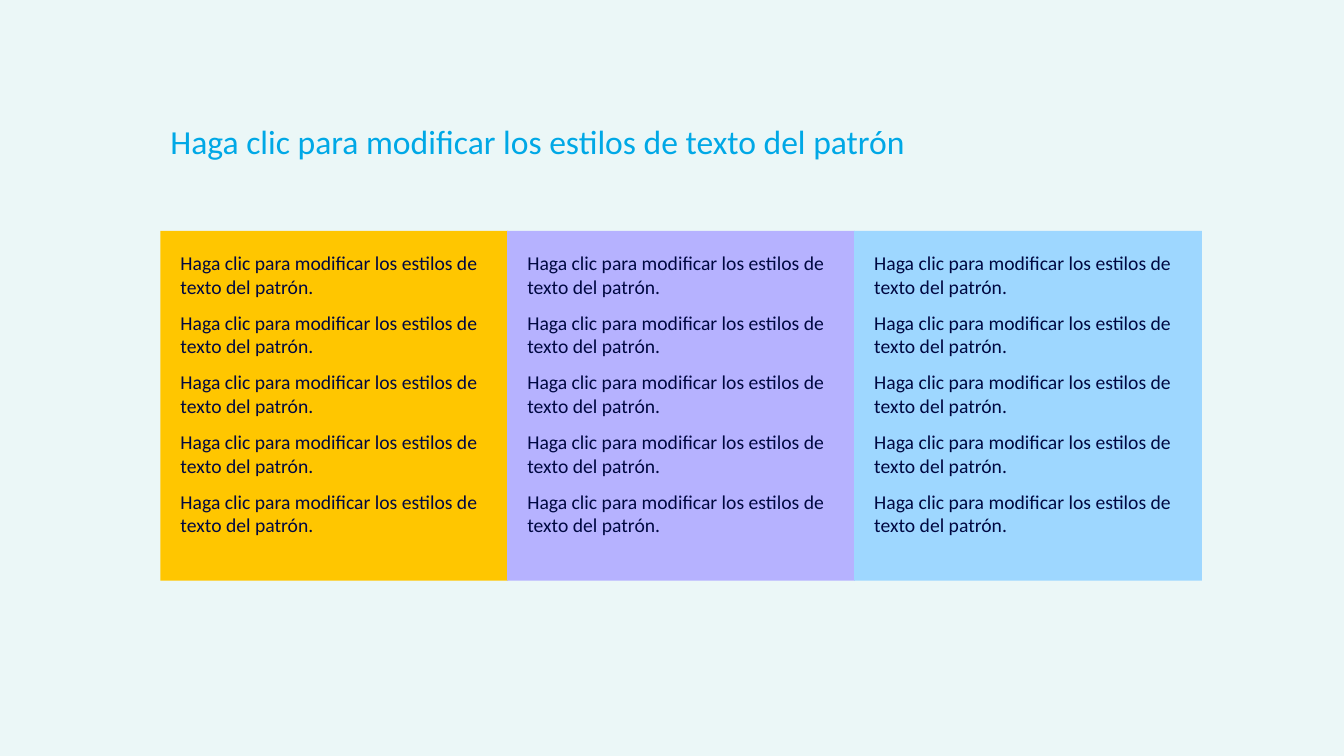
from pptx import Presentation
from pptx.dml.color import RGBColor
from pptx.enum.shapes import MSO_SHAPE
from pptx.enum.text import MSO_ANCHOR, MSO_AUTO_SIZE, PP_ALIGN
from pptx.util import Inches, Pt

RECTANGLE = MSO_SHAPE.RECTANGLE
TOP = MSO_ANCHOR.TOP
LEFT = PP_ALIGN.LEFT
NO_AUTOFIT = MSO_AUTO_SIZE.NONE
TITLE_ONLY = 5

FONT = "Calibri"
BACKGROUND, TITLE_COLOR, BODY_COLOR = "EBF7F7", "00A8E6", "000841"
COLUMN_FILLS = ["FFC600", "B6B2FF", "9ED7FF"]
HEADING = "Haga clic para modificar los estilos de texto del patrón"
COLUMN_TEXTS = [HEADING + "."] * 5


def paint(fill, color):
    fill.solid()
    fill.fore_color.rgb = RGBColor.from_string(color)


def write(frame, texts, size, color):
    """Fill a text frame with left-aligned paragraphs from the top."""
    frame.word_wrap = True
    frame.auto_size = NO_AUTOFIT
    frame.vertical_anchor = TOP
    for index, text in enumerate(texts):
        paragraph = frame.add_paragraph() if index else frame.paragraphs[0]
        paragraph.text = text
        paragraph.alignment = LEFT
        paragraph.space_before = Pt(9 if index else 0)
        paragraph.font.name = FONT
        paragraph.font.size = Pt(size)
        paragraph.font.color.rgb = RGBColor.from_string(color)


def place_title(slide, left, top, width, height):
    title = slide.shapes.title
    title.left, title.top = Inches(left), Inches(top)
    title.width, title.height = Inches(width), Inches(height)
    write(title.text_frame, [HEADING], 24, TITLE_COLOR)


def add_column(slide, left, top, width, height, color):
    column = slide.shapes.add_shape(
        RECTANGLE, Inches(left), Inches(top), Inches(width), Inches(height))
    column.shadow.inherit = False
    column.line.fill.background()
    paint(column.fill, color)
    frame = column.text_frame
    frame.margin_left = frame.margin_top = Inches(0.2)
    frame.margin_right, frame.margin_bottom = Inches(0.1), Inches(0.05)
    write(frame, COLUMN_TEXTS, 14, BODY_COLOR)


def add_columns(slide, left, top, width, height):
    """Split the box into equal columns that overlap by a hair."""
    overlap = 0.01
    count = len(COLUMN_FILLS)
    pitch = (width - overlap) / count
    for index, color in enumerate(COLUMN_FILLS):
        add_column(slide, left + index * pitch, top, pitch + overlap, height, color)


def main():
    presentation = Presentation()
    presentation.slide_width = Inches(13.33)
    presentation.slide_height = Inches(7.5)
    slide = presentation.slides.add_slide(presentation.slide_layouts[TITLE_ONLY])
    paint(slide.background.fill, BACKGROUND)

    # Heading above the three text columns
    place_title(slide, 1.59, 1.15, 9.47, 1)
    add_columns(slide, 1.59, 2.29, 10.33, 3.47)

    presentation.save("out.pptx")


if __name__ == "__main__":
    main()
